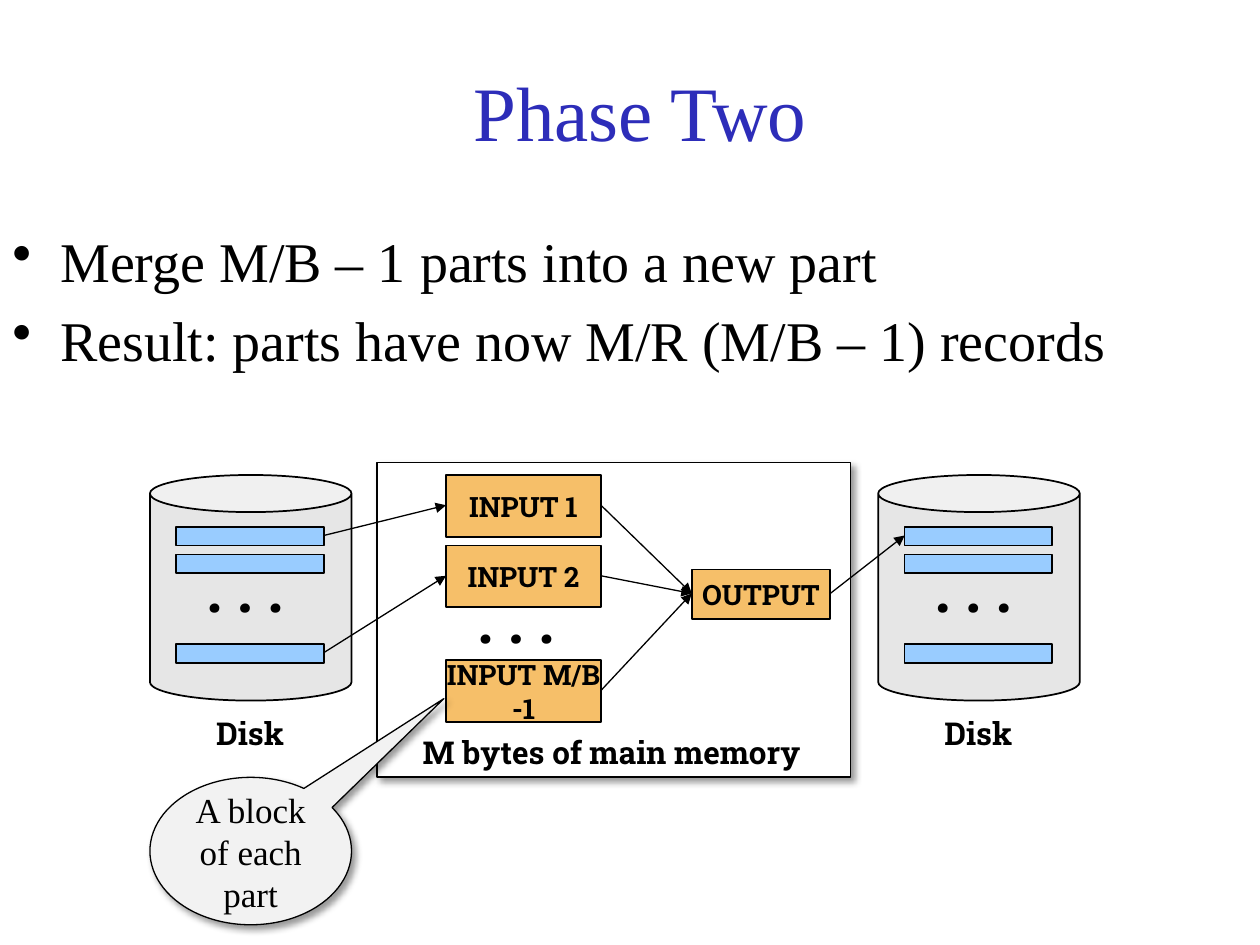
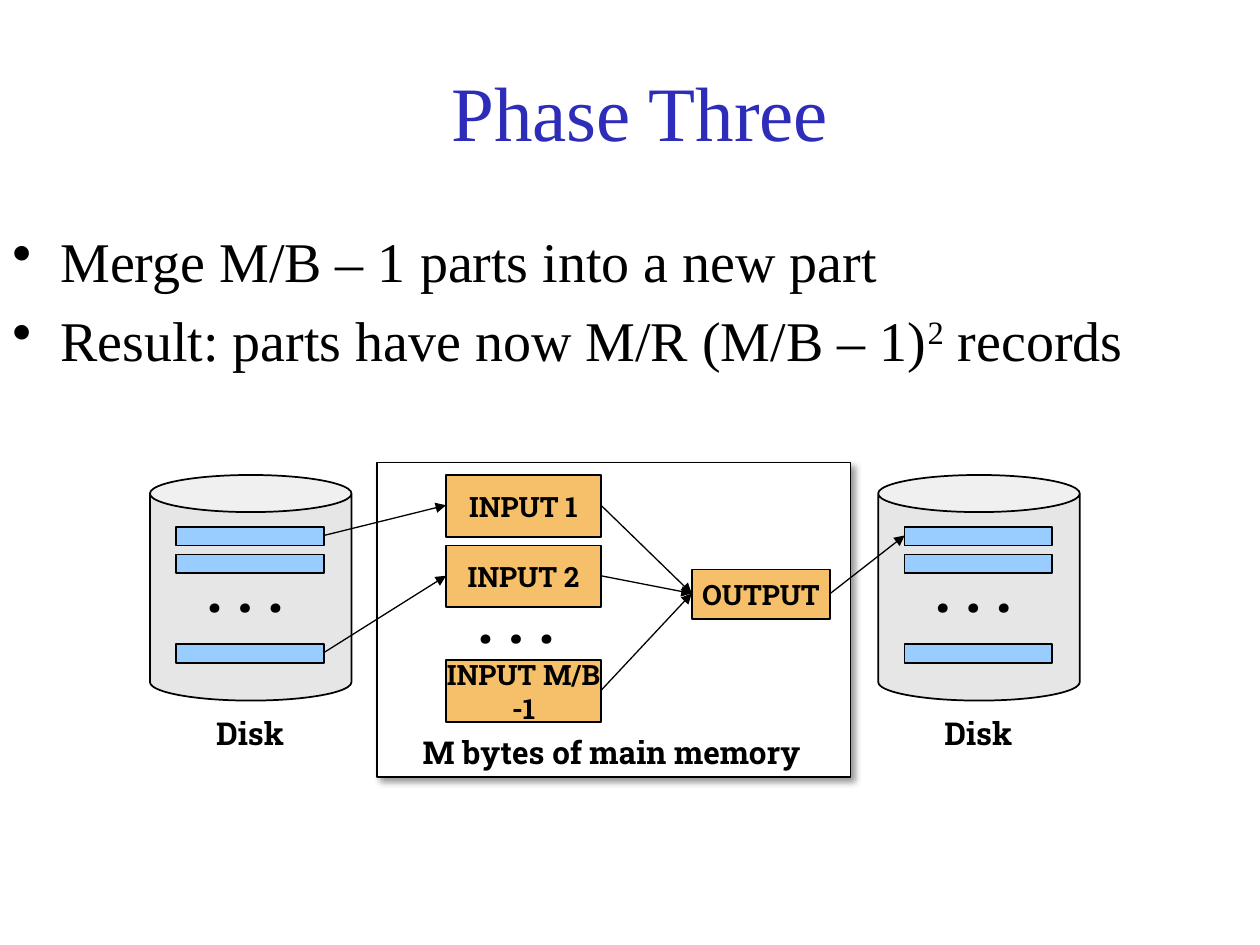
from pptx import Presentation
from pptx.dml.color import RGBColor
from pptx.enum.shapes import MSO_CONNECTOR, MSO_SHAPE
from pptx.enum.text import MSO_ANCHOR, MSO_AUTO_SIZE, PP_ALIGN
from pptx.oxml.ns import qn
from pptx.util import Pt
from lxml.etree import SubElement

PX = 9144  # 100 px to the inch
COLORS = {"title": "2D2DB9", "ink": "000000", "paper": "FFFFFF", "disk": "E6E6E6",
          "buffer": "F6BF69", "block": "99CCFF", "note": "F2F2F2"}
SERIF, SLAB, DOTS = "Times New Roman", "Roboto Slab", "Vollkorn"

# Left, top, width and height of the memory buffers
BUFFERS = {"INPUT 1": (354, 377, 123, 49), "INPUT 2": (354, 433, 123, 49),
           "INPUT M/B -1": (354, 524, 123, 49), "OUTPUT": (549, 452, 110, 39)}
BLOCK_TOPS = (418, 440, 511)
BLOCK_W, BLOCK_H = 117, 15
DISK_XS = (119, 697)
INSET = 21  # from the disk's edge to its blocks


class Deck:
    def __init__(self):
        self.prs = Presentation()
        self.prs.slide_width, self.prs.slide_height = 1000 * PX, 750 * PX
        self.shapes = None

    def start(self):
        self.shapes = self.prs.slides.add_slide(self.prs.slide_layouts[6]).shapes

    def style(self, frame, font, size, color="ink", bold=False, align=PP_ALIGN.CENTER):
        for para in frame.paragraphs:
            para.alignment = align
            for run in para.runs:
                run.font.name, run.font.size, run.font.bold = font, Pt(size), bold
                run.font.color.rgb = RGBColor.from_string(COLORS[color])

    def shape(self, kind, box, fill, width=1.0):
        item = self.shapes.add_shape(kind, *(n * PX for n in box))
        item.shadow.inherit = False
        item.fill.solid()
        item.fill.fore_color.rgb = RGBColor.from_string(COLORS[fill])
        item.line.color.rgb = RGBColor.from_string(COLORS["ink"])
        item.line.width = Pt(width)
        return item

    def shade(self, item):
        """Give a shape a soft shadow to the lower right."""
        effects = item._element.spPr.find(qn("a:effectLst"))
        outer = SubElement(effects, qn("a:outerShdw"), blurRad=str(Pt(4)),
                           dist=str(Pt(3)), dir="2700000", algn="tl", rotWithShape="0")
        color = SubElement(outer, qn("a:srgbClr"), val=COLORS["ink"])
        SubElement(color, qn("a:alpha"), val="40000")

    def label(self, item, text, font, size, bold=False):
        """Write centred text inside a shape, without margins."""
        frame = item.text_frame
        frame.margin_left = frame.margin_right = frame.margin_top = frame.margin_bottom = 0
        frame.vertical_anchor = MSO_ANCHOR.MIDDLE
        frame.word_wrap = True
        frame.text = text
        self.style(frame, font, size, bold=bold)

    def text(self, box, words, font, size, wrap=False, **look):
        frame = self.shapes.add_textbox(*(n * PX for n in box)).text_frame
        frame.text = words
        frame.word_wrap = wrap
        frame.auto_size = MSO_AUTO_SIZE.SHAPE_TO_FIT_TEXT
        self.style(frame, font, size, **look)
        return frame

    def title(self, words):
        frame = self.text((83, 25, 850, 125), words, SERIF, 44, wrap=True, color="title")
        frame.auto_size = MSO_AUTO_SIZE.NONE
        frame.vertical_anchor = MSO_ANCHOR.MIDDLE

    def bullets(self, lines):
        """Write a bulleted list; text between two ^ signs is raised."""
        frame = self.shapes.add_textbox(0, 175 * PX, 983 * PX, 450 * PX).text_frame
        frame.word_wrap = True
        for i, line in enumerate(lines):
            para = frame.add_paragraph() if i else frame.paragraphs[0]
            for j, part in enumerate(line.split("^")):
                run = para.add_run()
                run.text = part
                if j % 2:
                    run._r.get_or_add_rPr().set("baseline", "30000")
            props = para._p.get_or_add_pPr()
            props.set("marL", str(38 * PX))
            props.set("indent", str(-38 * PX))
            SubElement(SubElement(props, qn("a:spcBef")), qn("a:spcPct"), val="20000")
            SubElement(props, qn("a:buChar"), char="•")
        self.style(frame, SERIF, 32, align=PP_ALIGN.LEFT)

    def arrow(self, start, end):
        line = self.shapes.add_connector(MSO_CONNECTOR.STRAIGHT,
                                         *(n * PX for n in start + end))
        line.line.color.rgb = RGBColor.from_string(COLORS["ink"])
        line.line.width = Pt(0.75)
        SubElement(line.line._get_or_add_ln(), qn("a:tailEnd"), type="triangle")
        SubElement(line._element.spPr, qn("a:effectLst"))

    def dots(self, x, y):
        self.text((x, y, 90, 77), ". . .", DOTS, 40, align=PP_ALIGN.LEFT)

    def disk(self, x):
        can = self.shape(MSO_SHAPE.CAN, (x, 377, 160, 179), "disk")
        can.adjustments[0] = 0.184
        for top in BLOCK_TOPS:
            self.shape(MSO_SHAPE.RECTANGLE, (x + INSET, top, BLOCK_W, BLOCK_H), "block")
        self.dots(x + 35, 426)
        self.text((x + 40, 562, 79, 40), "Disk", SLAB, 18, bold=True)

    def memory(self):
        self.shade(self.shape(MSO_SHAPE.RECTANGLE, (299, 367, 376, 250), "paper"))
        for name, box in BUFFERS.items():
            item = self.shape(MSO_SHAPE.RECTANGLE, box, "buffer")
            self.label(item, name, SLAB, 16, bold=True)
        self.dots(369, 450)
        self.text((297, 577, 377, 40), "M bytes of main memory", SLAB, 18,
                  wrap=True, bold=True)

    def note(self, words):
        item = self.shape(MSO_SHAPE.OVAL_CALLOUT, (119, 617, 160, 117), "note", 0.75)
        item.adjustments[0], item.adjustments[1] = 0.958, -1.034
        self.shade(item)
        self.label(item, words, SERIF, 20)


def left(box):
    x, y, _, high = box
    return x, y + high // 2


def right(box):
    x, y, wide, high = box
    return x + wide, y + high // 2


def merge(deck):
    """Draw the blocks' way from disk through memory and back to disk."""
    deck.memory()
    for x in DISK_XS:
        deck.disk(x)
    first, _, last = [(DISK_XS[0] + INSET, top, BLOCK_W, BLOCK_H) for top in BLOCK_TOPS]
    goal = (DISK_XS[1] + INSET, BLOCK_TOPS[0], BLOCK_W, BLOCK_H)
    *inputs, output = BUFFERS.values()
    for block, buffer in zip((first, last), inputs):
        deck.arrow(right(block), left(buffer))
    for buffer in inputs:
        deck.arrow(right(buffer), left(output))
    deck.arrow(right(output), left(goal))


def main():
    deck = Deck()
    phases = [("Phase Two", "", "A block of each part"), ("Phase Three", "^2^", "")]
    for title, power, note in phases:
        deck.start()
        deck.title(title)
        deck.bullets(["Merge M/B – 1 parts into a new part",
                      f"Result: parts have now M/R (M/B – 1){power} records"])
        merge(deck)
        if note:
            deck.note(note)
    deck.prs.save("out.pptx")


if __name__ == "__main__":
    main()
